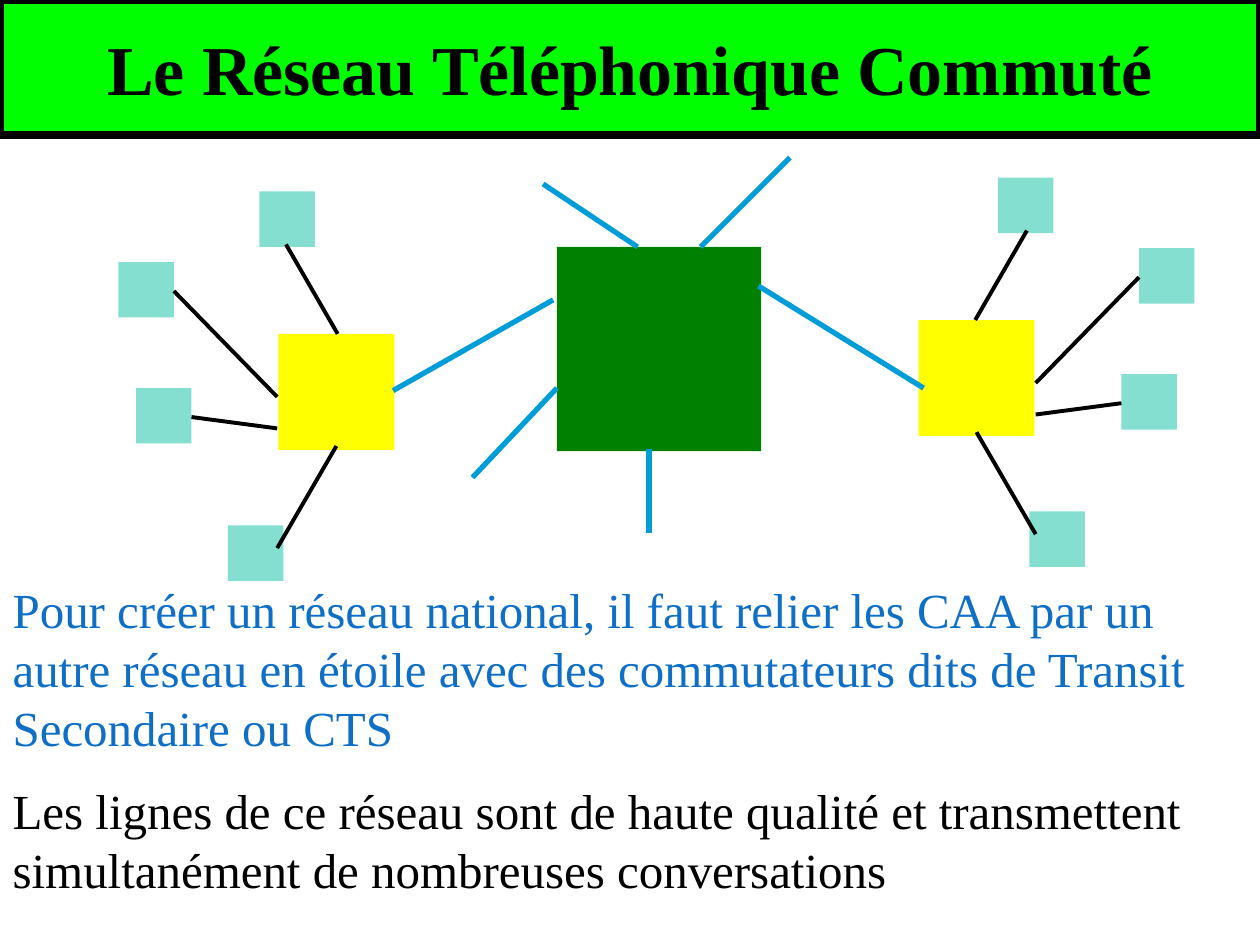
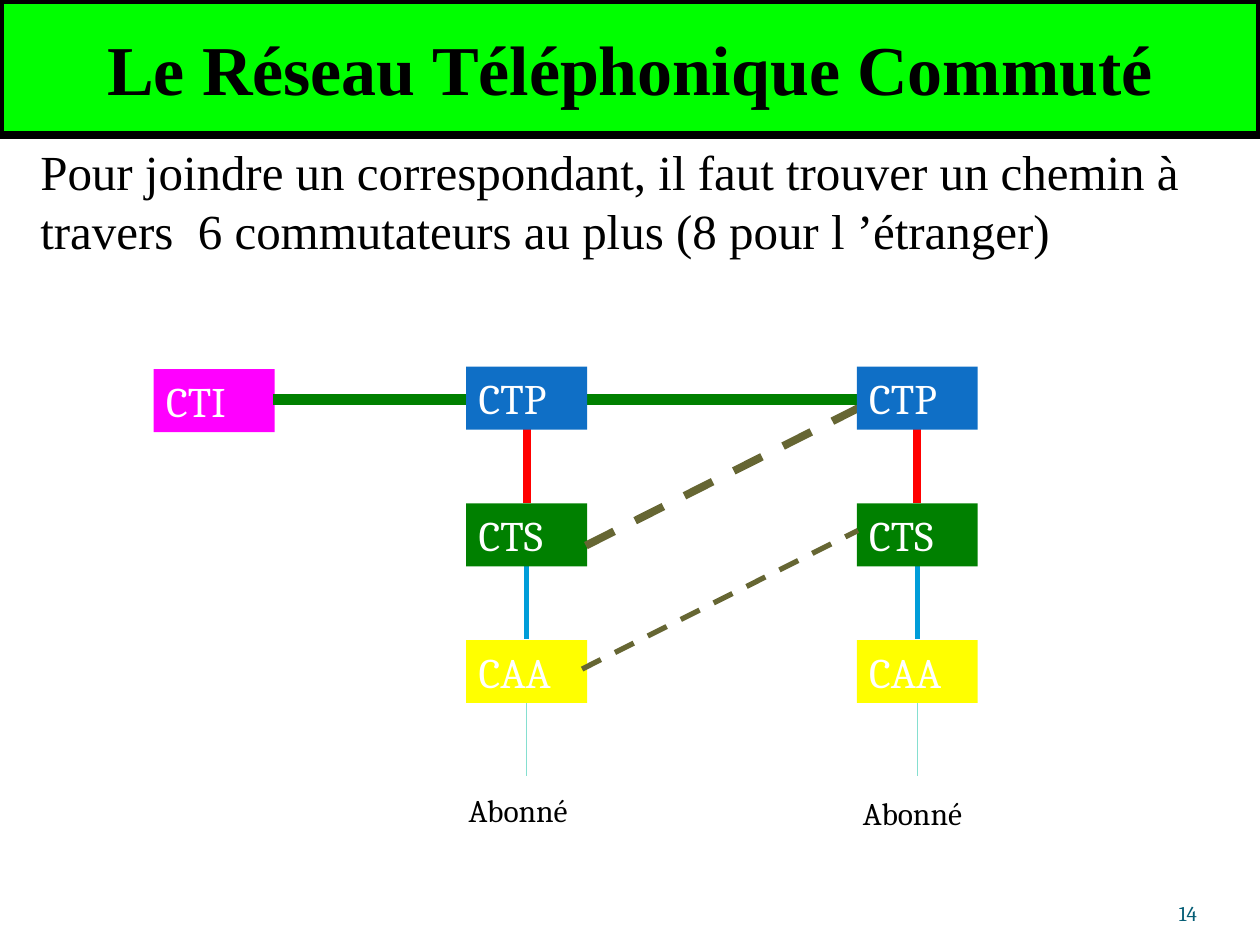
from lxml import etree
from pptx import Presentation
from pptx import util as u
from pptx.dml.color import RGBColor
from pptx.enum import dml, shapes, text
from pptx.oxml.ns import qn

# Theme: colours, fonts, type sizes, line widths
THEME = {
    "colour": dict(band="00FF00", ink="000000", blue="0F6FC6", sky="009DD9", mint="85DFD0",
                   yellow="FFFF00", green="008000", red="FF0000", pink="FF00FF",
                   olive="666633", white="FFFFFF", number="045D75"),
    "title": dict(name="Times New Roman", size=40, bold=True),
    "body": dict(name="Times New Roman", size=28),
    "node": dict(name="Cambria", size=24),
    "label": dict(name="Cambria", size=18),
    "number": dict(name="Cambria", size=12),
}
W, H = 10, 7.5
TITLE = "Le Réseau Téléphonique Commuté"
BAND = (0, 0, W, 1.07)

# Slide 1: two stars joined by a central switch
NATIONAL = dict(
    box=(0, 4.52, W, 2.69),
    paras=[("Pour créer un réseau national, il faut relier les CAA par un autre réseau "
            "en étoile avec des commutateurs dits de Transit Secondaire ou CTS", "blue"),
           ("Les lignes de ce réseau sont de haute qualité et transmettent "
            "simultanément de nombreuses conversations", "ink")])
SUBSCRIBER, HUB, CENTRE = 0.44, 0.92, 1.62      # square sides
HUB_AT, CENTRE_AT = (2.21, 2.65), (4.42, 1.96)
# subscriber corner, line start on subscriber, line end on hub
SUBSCRIBERS = [
    ((2.06, 1.52), (2.27, 1.94), (2.68, 2.65)),
    ((0.94, 2.08), (1.38, 2.31), (2.20, 3.15)),
    ((1.08, 3.08), (1.52, 3.31), (2.20, 3.40)),
    ((1.81, 4.17), (2.20, 4.35), (2.67, 3.54)),
]
MIRROR_SUM, MIRROR_DROP = 10.42, -0.11          # right star: x -> sum - x, y -> y + drop
CENTRE_LINES = [
    ((3.12, 3.10), (4.39, 2.38)), ((4.42, 3.08), (3.75, 3.79)),
    ((5.15, 3.56), (5.15, 4.23)), ((6.02, 2.27), (7.33, 3.08)),
    ((5.06, 1.96), (4.31, 1.46)), ((5.56, 1.96), (6.27, 1.25)),
]

# Slide 2: two columns of switches
ROUTE = dict(
    box=(0.22, 1.07, 9.44, 1.04),
    paras=[("Pour joindre un correspondant, il faut trouver un chemin à travers  6 "
            "commutateurs au plus (8 pour l ’étranger)", "ink")])
NODE = (0.96, 0.5)
COLUMNS = [3.7, 6.8]
ROW_TOP, ROW_PITCH = 2.91, 1.085
LINK_DROP, LINK_LENGTH = 0.46, 0.62
# name, fill, colour and width of the link below
LEVELS = [("CTP", "blue", "red", 4.5), ("CTS", "green", "sky", 3), ("CAA", "yellow", "mint", 0.75)]
CTI = ("CTI", "pink", (1.22, 2.93))
SHORTCUTS = [((4.62, 5.31), (6.81, 4.21), 3), ((4.65, 4.33), (6.83, 3.23), 4.5)]
TRUNK = ((2.17, 3.17), (6.92, 3.17), 6)
CALLER = "Abonné"
CALLERS_AT = [(3.62, 6.23), (6.75, 6.25)]
NUMBER = ("14", (8.67, 6.95, 0.83, 0.4))


def inches(values):
    return [u.Inches(v) for v in values]


def rgb(name):
    return RGBColor.from_string(THEME["colour"][name])


def write(sp, paras, style, align=text.PP_ALIGN.LEFT, anchor=text.MSO_ANCHOR.MIDDLE, **frame):
    """Fill a shape with (words, colour) paragraphs in a theme style."""
    tf = sp.text_frame
    settings = dict(word_wrap=True, auto_size=text.MSO_AUTO_SIZE.NONE, vertical_anchor=anchor,
                    margin_left=u.Inches(0.1), margin_right=u.Inches(0.1),
                    margin_top=u.Inches(0.05), margin_bottom=u.Inches(0.05))
    for key, value in {**settings, **frame}.items():
        setattr(tf, key, value)
    fmt = THEME[style]
    for i, (words, colour) in enumerate(paras):
        p = tf.add_paragraph() if i else tf.paragraphs[0]
        pPr = p._p.get_or_add_pPr()
        pPr.set("marL", "0")
        pPr.set("indent", "0")
        etree.SubElement(pPr, qn("a:buNone"))
        p.alignment = align
        p.space_before = u.Pt(fmt["size"] / 2 if i else 0)
        r = p.add_run()
        r.text = words
        for key, value in fmt.items():
            setattr(r.font, key, u.Pt(value) if key == "size" else value)
        r.font.color.rgb = rgb(colour)


def place(sp, box):
    for key, value in zip(("left", "top", "width", "height"), inches(box)):
        setattr(sp, key, value)


def rect(parent, at, size, fill):
    sp = parent.add_shape(shapes.MSO_SHAPE.RECTANGLE, *inches((*at, *size)))
    sp.shadow.inherit = False
    sp.fill.solid()
    sp.fill.fore_color.rgb = rgb(fill)
    sp.line.fill.background()
    return sp


def line(parent, start, end, colour, width, dash=None):
    c = parent.add_connector(shapes.MSO_CONNECTOR.STRAIGHT, *inches((*start, *end)))
    c.line.color.rgb = rgb(colour)
    c.line.width = u.Pt(width)
    if dash:
        c.line.dash_style = dash
    etree.SubElement(c._element.spPr, qn("a:effectLst"))


def new_slide(prs, content):
    """Slide with the green title band and its body text."""
    s = prs.slides.add_slide(prs.slide_layouts[1])
    title, body = s.placeholders
    place(title, BAND)
    title.fill.solid()
    title.fill.fore_color.rgb = rgb("band")
    title.line.color.rgb = rgb("ink")
    title.line.width = u.Pt(4.5)
    write(title, [(TITLE, "ink")], "title", align=text.PP_ALIGN.CENTER)
    place(body, content["box"])
    write(body, content["paras"], "body")
    return s


def star(s, mirrored):
    group = s.shapes.add_group_shape().shapes

    def point(xy, width=0):
        x, y = xy
        return (MIRROR_SUM - x - width, y + MIRROR_DROP) if mirrored else xy

    rect(group, point(HUB_AT, HUB), (HUB, HUB), "yellow")
    for corner, start, end in SUBSCRIBERS:
        rect(group, point(corner, SUBSCRIBER), (SUBSCRIBER, SUBSCRIBER), "mint")
        line(group, point(start), point(end), "ink", 2.25)


def national_slide(prs):
    s = new_slide(prs, NATIONAL)
    for mirrored in (False, True):
        star(s, mirrored)
    rect(s.shapes, CENTRE_AT, (CENTRE, CENTRE), "green")
    for start, end in CENTRE_LINES:
        line(s.shapes, start, end, "sky", 3)


def node(s, name, fill, at):
    write(rect(s.shapes, at, NODE, fill), [(name, "white")], "node")


def route_slide(prs):
    s = new_slide(prs, ROUTE)
    tops = [ROW_TOP + i * ROW_PITCH for i in range(len(LEVELS))]

    # Links below each switch
    for x in COLUMNS:
        mid = x + NODE[0] / 2
        for top, (_, _, colour, width) in zip(tops, LEVELS):
            y = top + LINK_DROP
            line(s.shapes, (mid, y), (mid, y + LINK_LENGTH), colour, width)

    # Lower switches, then shortcuts and trunk, then the top row over them
    for x in COLUMNS:
        for top, (name, fill, _, _) in list(zip(tops, LEVELS))[1:]:
            node(s, name, fill, (x, top))
    node(s, *CTI)
    for start, end, width in SHORTCUTS:
        line(s.shapes, start, end, "olive", width, dml.MSO_LINE.DASH)
    line(s.shapes, *TRUNK[:2], "green", TRUNK[2])
    for x in COLUMNS:
        node(s, *LEVELS[0][:2], (x, ROW_TOP))

    # Subscribers and slide number
    for at in CALLERS_AT:
        sp = s.shapes.add_textbox(*inches((*at, 1.08, 0.4)))
        write(sp, [(CALLER, "ink")], "label")
    words, box = NUMBER
    sp = s.shapes.add_textbox(*inches(box))
    write(sp, [(words, "number")], "number", text.PP_ALIGN.RIGHT, text.MSO_ANCHOR.BOTTOM,
          margin_left=0, margin_right=0, margin_top=0, margin_bottom=0)


def main():
    prs = Presentation()
    prs.slide_width, prs.slide_height = inches((W, H))
    national_slide(prs)
    route_slide(prs)
    prs.save("out.pptx")


if __name__ == "__main__":
    main()
